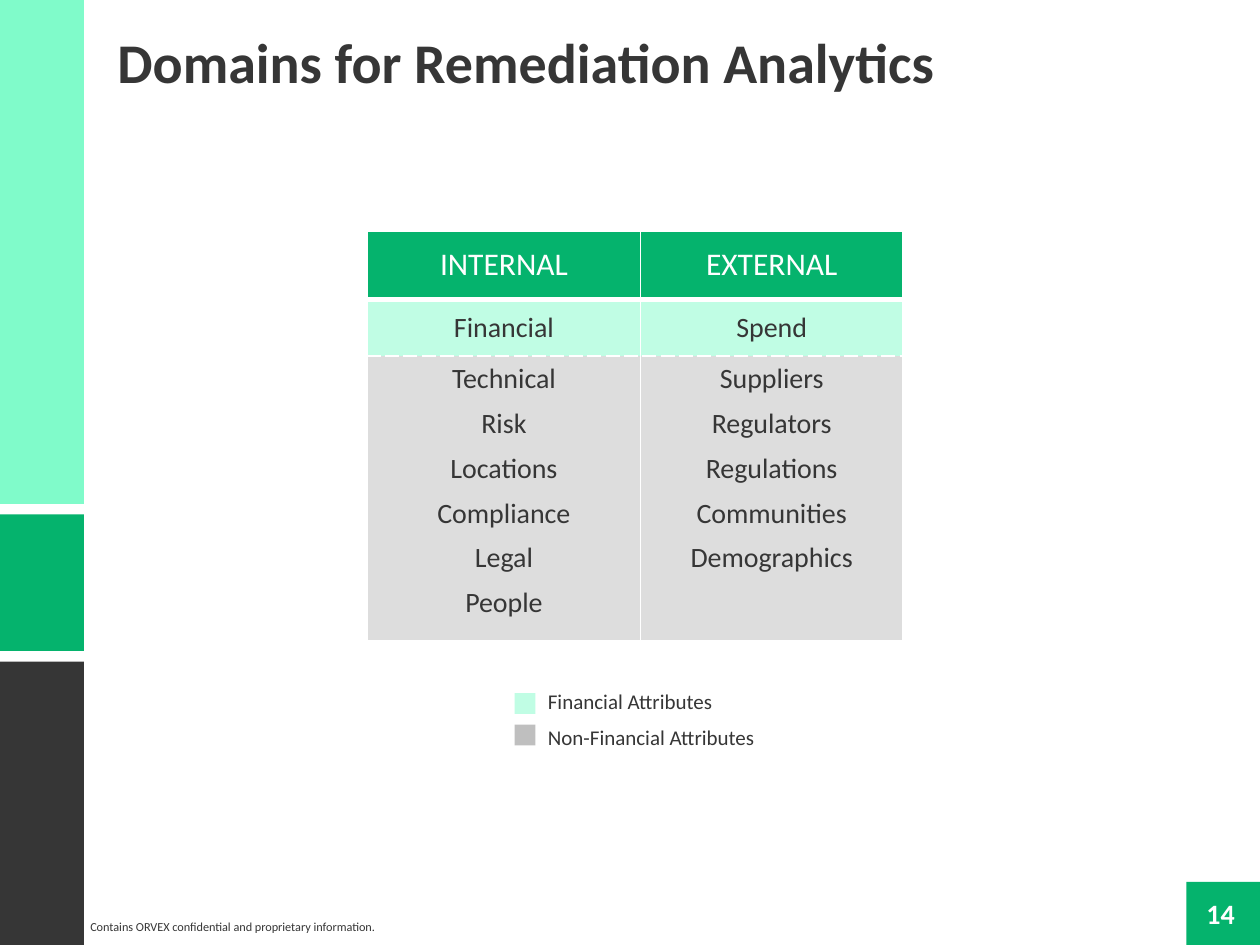
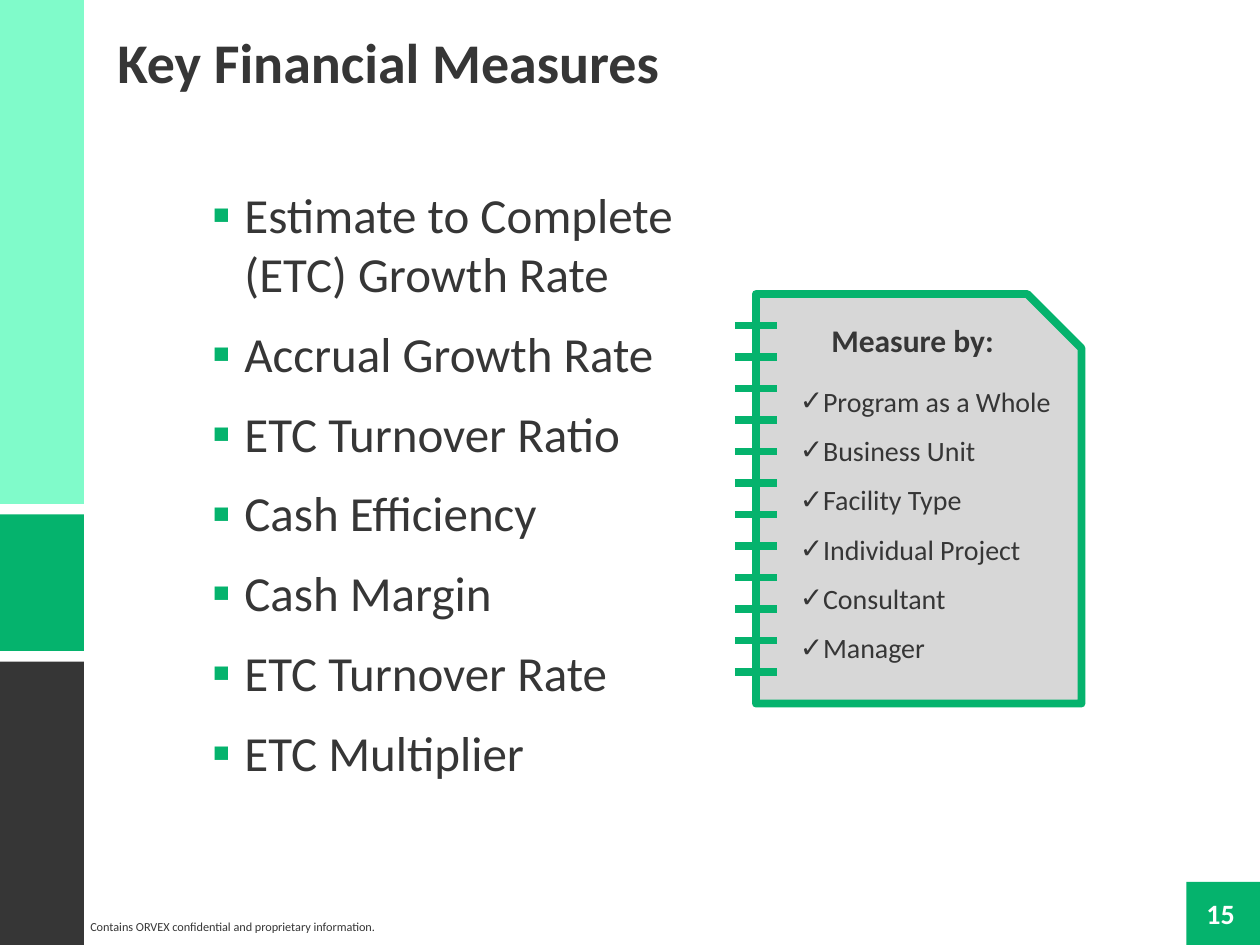
from dataclasses import dataclass

from lxml.etree import SubElement
from pptx import Presentation
from pptx.dml.color import RGBColor
from pptx.enum.shapes import MSO_CONNECTOR as Connector, MSO_SHAPE as Shape
from pptx.enum.text import MSO_ANCHOR as Anchor, PP_ALIGN as Align
from pptx.oxml.ns import qn
from pptx.util import Emu, Pt

# Content
FOOTER = "Contains ORVEX confidential and proprietary information."
DOMAINS = {
    "title": "Domains for Remediation Analytics",
    "number": 14,
    "rows": [
        (["INTERNAL"], ["EXTERNAL"]),
        (["Financial"], ["Spend"]),
        (["Technical", "Risk", "Locations", "Compliance", "Legal", "People"],
         ["Suppliers", "Regulators", "Regulations", "Communities", "Demographics"]),
    ],
    "legend": ["Financial Attributes", "Non-Financial Attributes"],
}
MEASURES = {
    "title": "Key Financial Measures",
    "number": 15,
    "measures": [
        "Estimate to Complete (ETC) Growth Rate", "Accrual Growth Rate",
        "ETC Turnover Ratio", "Cash Efficiency", "Cash Margin",
        "ETC Turnover Rate", "ETC Multiplier",
    ],
    "heading": "Measure by:",
    "checks": ["Program as a Whole", "Business Unit", "Facility Type",
               "Individual Project", "Consultant", "Manager"],
}


@dataclass(frozen=True)
class Theme:
    font: str = "Calibri"
    green: str = "05B36D"
    mint: str = "80FBCA"
    pale_mint: str = "C0FDE4"
    dark: str = "363636"
    white: str = "FFFFFF"
    cell_grey: str = "DDDDDD"
    legend_grey: str = "BFBFBF"
    paper_grey: str = "D7D7D7"
    title: int = 32
    measure: int = 28
    heading: int = 18
    body: int = 16
    legend: int = 12
    footer: int = 7


THEME = Theme()
SCALE = 7620  # EMU in one px, 120 px to the inch


def px(value):
    return Emu(value * SCALE)


def rgb(color):
    return RGBColor.from_string(color)


# Shared drawing helpers
def add_block(page, place, color, kind=Shape.RECTANGLE):
    block = page.shapes.add_shape(kind, *map(px, place))
    block.shadow.inherit = False
    block.fill.solid()
    block.fill.fore_color.rgb = rgb(color)
    block.line.fill.background()
    return block


def set_bullet(para, char, indent, color, percent):
    properties = para._p.get_or_add_pPr()
    properties.set("marL", str(px(indent)))
    properties.set("indent", str(-px(indent)))
    bullet_color = SubElement(properties, qn("a:buClr"))
    SubElement(bullet_color, qn("a:srgbClr"), val=color)
    SubElement(properties, qn("a:buSzPct"), val=str(percent * 1000))
    SubElement(properties, qn("a:buFont"), typeface="Arial")
    SubElement(properties, qn("a:buChar"), char=char)


def write(frame, lines, size, color=THEME.dark, bold=False, align=Align.LEFT,
          after=0, bullet=None):
    frame.text = "\n".join(lines)
    for para in frame.paragraphs:
        para.alignment = align
        para.space_after = Pt(after)
        if bullet:
            set_bullet(para, *bullet)
        for span in para.runs:
            span.font.name = THEME.font
            span.font.size = Pt(size)
            span.font.bold = bold
            span.font.color.rgb = rgb(color)


def add_text(page, place, lines, size, wrap=True, side_inset=12, **style):
    box = page.shapes.add_textbox(*map(px, place))
    frame = box.text_frame
    frame.word_wrap = wrap
    frame.margin_left = frame.margin_right = px(side_inset)
    write(frame, lines, size, **style)


def add_page(deck, content):
    page = deck.slides.add_slide(deck.slide_layouts[6])
    # Side bands
    for top, height, color in [(0, 480, THEME.mint), (490, 130, THEME.green),
                               (630, 270, THEME.dark)]:
        add_block(page, (0, top, 80, height), color)
    # Footer and page number
    add_text(page, (86, 870, 294, 26), [FOOTER], THEME.footer, side_inset=0)
    add_block(page, (1130, 840, 70, 60), THEME.green)
    add_text(page, (1130, 848, 65, 44), [str(content["number"])], THEME.body,
             side_inset=0, color=THEME.white, bold=True, align=Align.CENTER)
    add_text(page, (100, 20, 1080, 77), [content["title"]], THEME.title, bold=True)
    return page


# Domains slide
def set_borders(cell, top, bottom):
    side, thin = (1, "solid"), cell._tc.get_or_add_tcPr()
    for name, (width, dash) in zip("LRTB", (side, side, top, bottom)):
        line = SubElement(thin, qn(f"a:ln{name}"), w=str(Pt(width)))
        fill = SubElement(line, qn("a:solidFill"))
        SubElement(fill, qn("a:srgbClr"), val=THEME.white)
        SubElement(line, qn("a:prstDash"), val=dash)


def add_domain_table(page, rows):
    widths, heights = (260, 250), (65, 54, 271)
    edges = [(1, "solid"), (3, "solid"), (1.5, "lgDash"), (1, "solid")]
    # fill, text colour, type size, anchor, space after
    row_styles = [
        (THEME.green, THEME.white, THEME.heading, Anchor.MIDDLE, 0),
        (THEME.pale_mint, THEME.dark, THEME.body, Anchor.MIDDLE, 0),
        (THEME.cell_grey, THEME.dark, THEME.body, Anchor.TOP, 6),
    ]
    place = (350, 220, sum(widths), sum(heights))
    table = page.shapes.add_table(len(rows), len(widths), *map(px, place)).table
    table.horz_banding = False
    for column, width in zip(table.columns, widths):
        column.width = px(width)
    for r, (row, style) in enumerate(zip(rows, row_styles)):
        fill, color, size, anchor, after = style
        table.rows[r].height = px(heights[r])
        for c, lines in enumerate(row):
            cell = table.cell(r, c)
            set_borders(cell, edges[r], edges[r + 1])
            cell.fill.solid()
            cell.fill.fore_color.rgb = rgb(fill)
            cell.vertical_anchor = anchor
            write(cell.text_frame, lines, size, color=color,
                  align=Align.CENTER, after=after)


def build_domains(deck):
    page = add_page(deck, DOMAINS)
    add_domain_table(page, DOMAINS["rows"])
    # Legend
    add_text(page, (510, 650, 250, 71), DOMAINS["legend"], THEME.legend, after=6)
    for i, color in enumerate([THEME.pale_mint, THEME.legend_grey]):
        add_block(page, (490, 660 + 30 * i, 20, 20), color)


# Measures slide
def add_notebook(page):
    paper = add_block(page, (720, 280, 310, 390), THEME.paper_grey,
                      Shape.SNIP_1_RECTANGLE)
    rings = [
        page.shapes.add_connector(Connector.STRAIGHT, px(700), px(y), px(740), px(y))
        for y in range(310, 641, 30)
    ]
    for outline in [paper, *rings]:
        outline.line.color.rgb = rgb(THEME.green)
        outline.line.width = Pt(4.5)
    for ring in rings:
        SubElement(ring._element.spPr, qn("a:effectLst"))


def build_measures(deck):
    page = add_page(deck, MEASURES)
    add_text(page, (190, 170, 510, 586), MEASURES["measures"], THEME.measure,
             after=12, bullet=("▪", 31, THEME.green, 110))
    add_notebook(page)
    add_text(page, (780, 300, 180, 48), [MEASURES["heading"]], THEME.heading,
             wrap=False, bold=True)
    add_text(page, (750, 360, 274, 282), MEASURES["checks"], THEME.body,
             after=9, bullet=("✓", 22, THEME.dark, 100))


def main():
    deck = Presentation()
    deck.slide_width, deck.slide_height = px(1200), px(900)
    build_domains(deck)
    build_measures(deck)
    deck.save("out.pptx")


if __name__ == "__main__":
    main()
